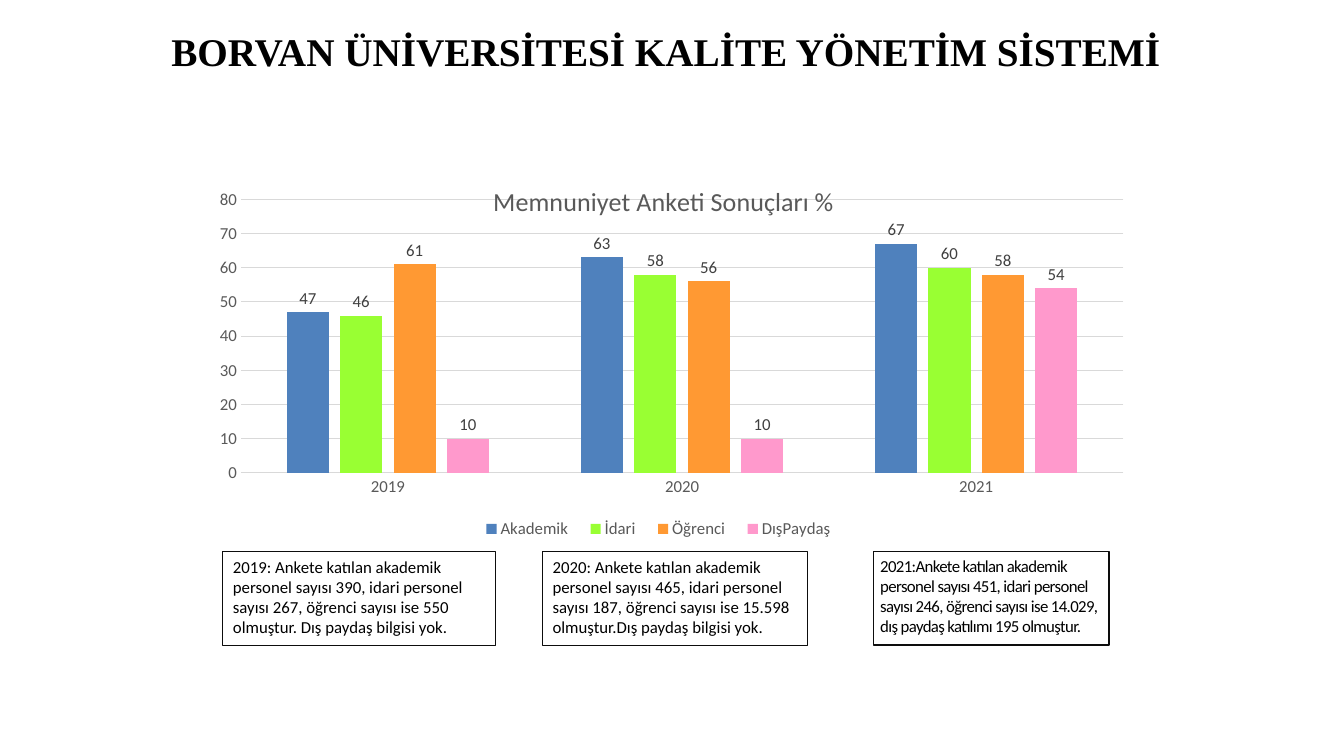
"""Build the satisfaction survey slide with its column chart and yearly notes."""
import dataclasses
import typing

import pptx
import pptx.chart.data
import pptx.dml.color
import pptx.enum.chart
import pptx.enum.text
import pptx.oxml
import pptx.oxml.ns
import pptx.util


@dataclasses.dataclass(frozen=True)
class Theme:
    text: str = "000000"
    muted: str = "595959"
    label: str = "404040"
    grid: str = "D9D9D9"
    border: str = "0D0D0D"
    heading_font: str = "Times New Roman"
    body_font: str = "Calibri"
    heading_size: float = 28
    chart_title_size: float = 18.6
    body_size: float = 12
    line_width: float = 0.75


@dataclasses.dataclass(frozen=True)
class Area:
    """Position and size in percent of the slide's width and height."""
    left: float
    top: float
    width: float
    height: float


@dataclasses.dataclass(frozen=True)
class Group:
    name: str
    values: tuple[int, ...]
    color: str


@dataclasses.dataclass(frozen=True)
class Note:
    left: float
    width: float
    text: str
    placeholder: typing.Optional[int] = None
    inset: tuple[float, float] = (0.1, 0.05)
    spacing: int = 0


THEME = Theme()
SLIDE_WIDTH = pptx.util.Inches(13.33)
SLIDE_HEIGHT = pptx.util.Inches(7.5)
TITLE_AREA = Area(9.4, 1.65, 80.25, 10.13)
CHART_AREA = Area(14.55, 21.6, 70.3, 51.73)
NOTE_TOP, NOTE_HEIGHT = 72.93, 12.4
YEARS = ("2019", "2020", "2021")
GROUPS = (
    Group("Akademik", (47, 63, 67), "4F81BD"),
    Group("İdari", (46, 58, 60), "99FF33"),
    Group("Öğrenci", (61, 56, 58), "FF9933"),
    Group("DışPaydaş", (10, 10, 54), "FF99CC"),
)
NOTES = (
    Note(16.58, 20.26, "2019: Ankete katılan akademik personel sayısı 390, idari personel sayısı 267, "
         "öğrenci sayısı ise 550 olmuştur. Dış paydaş bilgisi yok.", placeholder=1),
    Note(40.36, 19.73, "2020: Ankete katılan akademik personel sayısı 465, idari personel sayısı 187, "
         "öğrenci sayısı ise 15.598 olmuştur.Dış paydaş bilgisi yok.", placeholder=2),
    Note(64.97, 17.55, "2021:Ankete katılan akademik personel sayısı 451, idari personel sayısı 246, "
         "öğrenci sayısı ise 14.029, dış paydaş katılımı 195 olmuştur.",
         inset=(0.07, 0.04), spacing=-45),
)


def frame(area: Area) -> tuple[int, int, int, int]:
    """Convert an area to left, top, width and height in EMU."""
    return (round(SLIDE_WIDTH * area.left / 100), round(SLIDE_HEIGHT * area.top / 100),
            round(SLIDE_WIDTH * area.width / 100), round(SLIDE_HEIGHT * area.height / 100))


def place(box: typing.Any, area: Area) -> None:
    """Move and size a shape to an area."""
    box.left, box.top, box.width, box.height = frame(area)


def rgb(color: str) -> pptx.dml.color.RGBColor:
    """Return a colour object for a hexadecimal string."""
    return pptx.dml.color.RGBColor.from_string(color)


def style_font(font: typing.Any, color: str, size: float = THEME.body_size,
               name: str = THEME.body_font, bold: bool = False) -> None:
    """Set typeface, size, weight and colour."""
    font.name, font.size, font.bold = name, pptx.util.Pt(size), bold
    font.color.rgb = rgb(color)


def style_line(line: typing.Any, color: str) -> None:
    """Give a line its colour and the common width."""
    line.color.rgb = rgb(color)
    line.width = pptx.util.Pt(THEME.line_width)


def set_layout(parent: typing.Any, index: int, inner: bool = False, **shares: float) -> None:
    """Fix a chart part's place by shares of the chart area."""
    for old in parent.xpath("c:layout"):
        parent.remove(old)
    target = '<c:layoutTarget val="inner"/>' if inner else ""
    modes = "".join(f'<c:{key}Mode val="edge"/>' for key in shares if key in "xy")
    values = "".join(f'<c:{key} val="{value}"/>' for key, value in shares.items())
    parent.insert(index, pptx.oxml.parse_xml(
        f'<c:layout {pptx.oxml.ns.nsdecls("c")}><c:manualLayout>'
        f'{target}{modes}{values}</c:manualLayout></c:layout>'))


def draw_title(page: typing.Any) -> None:
    """Fill the title placeholder."""
    box = page.shapes.title
    place(box, TITLE_AREA)
    box.text_frame.text = "BORVAN ÜNİVERSİTESİ KALİTE YÖNETİM SİSTEMİ"
    box.text_frame.auto_size = pptx.enum.text.MSO_AUTO_SIZE.NONE
    box.text_frame.vertical_anchor = pptx.enum.text.MSO_ANCHOR.MIDDLE
    para = box.text_frame.paragraphs[0]
    para.alignment = pptx.enum.text.PP_ALIGN.CENTER
    style_font(para.font, THEME.text, THEME.heading_size, THEME.heading_font, bold=True)


def style_axes(chart: typing.Any) -> None:
    """Format both axes and the gridlines."""
    for axis in (chart.category_axis, chart.value_axis):
        axis.major_tick_mark = axis.minor_tick_mark = pptx.enum.chart.XL_TICK_MARK.NONE
        style_font(axis.tick_labels.font, THEME.muted)
    style_line(chart.category_axis.format.line, THEME.grid)
    values = chart.value_axis
    values.minimum_scale, values.maximum_scale, values.major_unit = 0, 80, 10
    values.format.line.fill.background()
    style_line(values.major_gridlines.format.line, THEME.grid)


def draw_chart(page: typing.Any) -> None:
    """Add the clustered column chart of survey results."""
    data = pptx.chart.data.CategoryChartData()
    data.categories = YEARS
    for group in GROUPS:
        data.add_series(group.name, group.values)
    chart = page.shapes.add_chart(
        pptx.enum.chart.XL_CHART_TYPE.COLUMN_CLUSTERED, *frame(CHART_AREA), data).chart
    style_font(chart.font, THEME.text, 10)
    style_axes(chart)

    chart.has_title = True
    chart.chart_title.text_frame.text = "Memnuniyet Anketi Sonuçları %"
    style_font(chart.chart_title.text_frame.paragraphs[0].font, THEME.muted, THEME.chart_title_size)
    title = chart.element.xpath("c:chart/c:title")[0]
    set_layout(title, 1, x=0.31, y=0.04)
    title.xpath("c:overlay")[0].set("val", "1")

    chart.has_legend = True
    chart.legend.position = pptx.enum.chart.XL_LEGEND_POSITION.BOTTOM
    chart.legend.include_in_layout = False
    style_font(chart.legend.font, THEME.muted)
    set_layout(chart.element.xpath("c:chart/c:legend")[0], 1, x=0.29, y=0.9, w=0.4, h=0.07)

    plot = chart.plots[0]
    plot.gap_width, plot.overlap, plot.vary_by_categories = 219, -27, False
    for series, group in zip(plot.series, GROUPS):
        series.format.fill.solid()
        series.format.fill.fore_color.rgb = rgb(group.color)
        series.data_labels.show_value = True
        series.data_labels.position = pptx.enum.chart.XL_LABEL_POSITION.OUTSIDE_END
        style_font(series.data_labels.font, THEME.label)
    set_layout(chart.element.xpath("c:chart/c:plotArea")[0], 0, inner=True,
               x=0.048, y=0.092, w=0.934, h=0.7)


def draw_note(page: typing.Any, note: Note) -> None:
    """Write one outlined note under the chart."""
    area = Area(note.left, NOTE_TOP, note.width, NOTE_HEIGHT)
    if note.placeholder is None:
        box = page.shapes.add_textbox(*frame(area))
    else:
        box = page.placeholders[note.placeholder]
        place(box, area)
    style_line(box.line, THEME.border)
    body = box.text_frame
    body.text = note.text
    body.word_wrap = True
    body.auto_size = pptx.enum.text.MSO_AUTO_SIZE.NONE
    body.vertical_anchor = pptx.enum.text.MSO_ANCHOR.TOP
    body.margin_left = body.margin_right = pptx.util.Inches(note.inset[0])
    body.margin_top = body.margin_bottom = pptx.util.Inches(note.inset[1])
    para = body.paragraphs[0]
    para.space_before = pptx.util.Pt(THEME.body_size * 0.2)
    style_font(para.font, THEME.text)
    settings = para._p.get_or_add_pPr()
    settings.set("marL", "0")
    settings.set("indent", "0")
    bullet = pptx.oxml.parse_xml(f'<a:buNone {pptx.oxml.ns.nsdecls("a")}/>')
    settings.xpath("a:defRPr")[0].addprevious(bullet)
    if note.spacing:
        para.runs[0]._r.get_or_add_rPr().set("spc", str(note.spacing))


def main() -> None:
    """Assemble and save the deck."""
    deck = pptx.Presentation()
    deck.slide_width, deck.slide_height = SLIDE_WIDTH, SLIDE_HEIGHT
    page = deck.slides.add_slide(deck.slide_layouts.get_by_name("Two Content"))
    draw_title(page)
    draw_chart(page)
    for note in NOTES:
        draw_note(page, note)
    deck.save("out.pptx")


if __name__ == "__main__":
    main()
